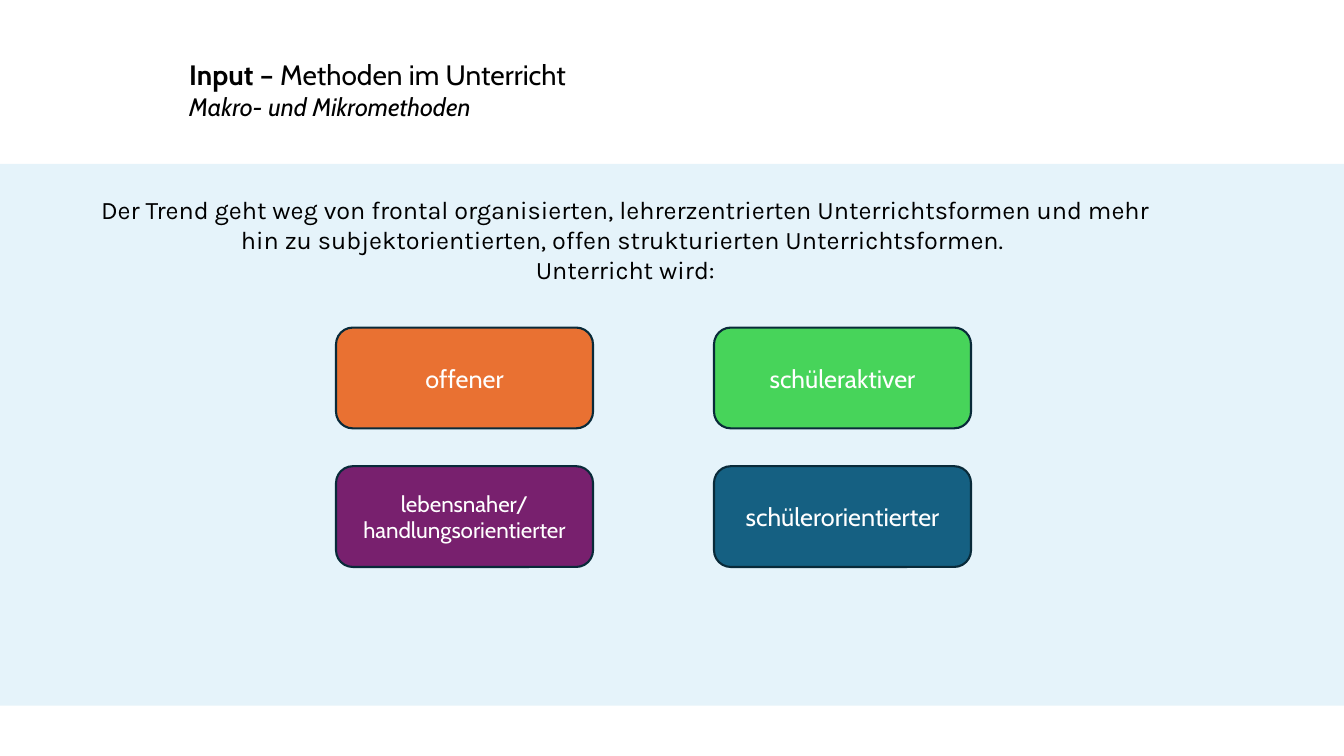
from dataclasses import dataclass

from lxml.etree import SubElement
from pptx import Presentation
from pptx.dml.color import RGBColor as Rgb
from pptx.enum.shapes import MSO_SHAPE as Kind
from pptx.enum.text import MSO_ANCHOR as Anchor, PP_ALIGN as Align
from pptx.oxml.ns import qn
from pptx.util import Inches, Pt


@dataclass(frozen=True)
class Theme:
    head: str = "Cabin"
    body: str = "Karla"
    big: int = 20
    mid: int = 18
    small: int = 16
    ink: str = "000000"
    white: str = "FFFFFF"
    edge: str = "092A39"
    band: str = "008CCF"
    orange: str = "E97132"
    green: str = "47D45A"
    purple: str = "78206E"
    blue: str = "156082"


THEME = Theme()
WIDE, HIGH = Inches(13.33), Inches(7.5)
COLS, ROWS = 32, 60


def area(col, row, width, height):
    return (round(WIDE * col / COLS), round(HIGH * row / ROWS),
            round(WIDE * width / COLS), round(HIGH * height / ROWS))


def add_run(para, text, size, font, color, bold=False, slant=False):
    run = para.add_run()
    run.text = text
    run.font.size = Pt(size)
    run.font.name = font
    run.font.bold = bold
    run.font.italic = slant
    run.font.color.rgb = Rgb.from_string(color)


def add_para(frame, first, align=Align.LEFT):
    para = frame.paragraphs[0] if first else frame.add_paragraph()
    para.alignment = align
    return para


def add_text(slide, place):
    frame = slide.shapes.add_textbox(*place).text_frame
    frame.word_wrap = True
    return frame


def add_block(slide, kind, place, color):
    block = slide.shapes.add_shape(kind, *place)
    block.shadow.inherit = False
    block.fill.solid()
    block.fill.fore_color.rgb = Rgb.from_string(color)
    return block


def add_band(slide):
    band = add_block(slide, Kind.RECTANGLE, area(0, 13, COLS, 43), THEME.band)
    band.line.fill.background()
    tint = band.fill._xPr.find(qn("a:solidFill"))[0]
    SubElement(tint, qn("a:alpha")).set("val", "10000")


def add_title(slide):
    frame = add_text(slide, area(4.27, 4.16, 15.3, 5.92))
    title = add_para(frame, True)
    add_run(title, "Input – ", THEME.big, THEME.head, THEME.ink, bold=True)
    add_run(title, "Methoden im Unterricht", THEME.big, THEME.head, THEME.ink)
    add_run(add_para(frame, False), "Makro- und Mikromethoden",
            THEME.mid, THEME.head, THEME.ink, slant=True)


def add_intro(slide):
    frame = add_text(slide, area(1.94, 15, 25.9, 13))
    lines = ("Der Trend geht weg von frontal organisierten, lehrerzentrierten "
             "Unterrichtsformen und mehr hin zu subjektorientierten, offen "
             "strukturierten Unterrichtsformen. ", "Unterricht wird:")
    for num, line in enumerate(lines):
        para = add_para(frame, num == 0, Align.CENTER)
        add_run(para, line, THEME.mid, THEME.body, THEME.ink)


def add_card(slide, col, row, color, size, lines):
    place = area(8 + 9 * col, 26 + 11 * row, 6.12, 8)
    card = add_block(slide, Kind.ROUNDED_RECTANGLE, place, color)
    card.line.color.rgb = Rgb.from_string(THEME.edge)
    card.line.width = Pt(1.5)
    frame = card.text_frame
    frame.word_wrap = True
    frame.vertical_anchor = Anchor.MIDDLE
    for num, line in enumerate(lines):
        para = add_para(frame, num == 0, Align.CENTER)
        add_run(para, line, size, THEME.head, THEME.white)


def main():
    deck = Presentation()
    deck.slide_width, deck.slide_height = WIDE, HIGH
    slide = deck.slides.add_slide(deck.slide_layouts[6])
    add_band(slide)
    add_title(slide)
    add_intro(slide)
    cards = (
        (THEME.orange, THEME.mid, ["offener"]),
        (THEME.green, THEME.mid, ["schüleraktiver"]),
        (THEME.purple, THEME.small, ["lebensnaher/", "handlungsorientierter"]),
        (THEME.blue, THEME.mid, ["schülerorientierter"]),
    )
    for num, (color, size, lines) in enumerate(cards):
        row, col = divmod(num, 2)
        add_card(slide, col, row, color, size, lines)
    deck.save("out.pptx")


if __name__ == "__main__":
    main()
